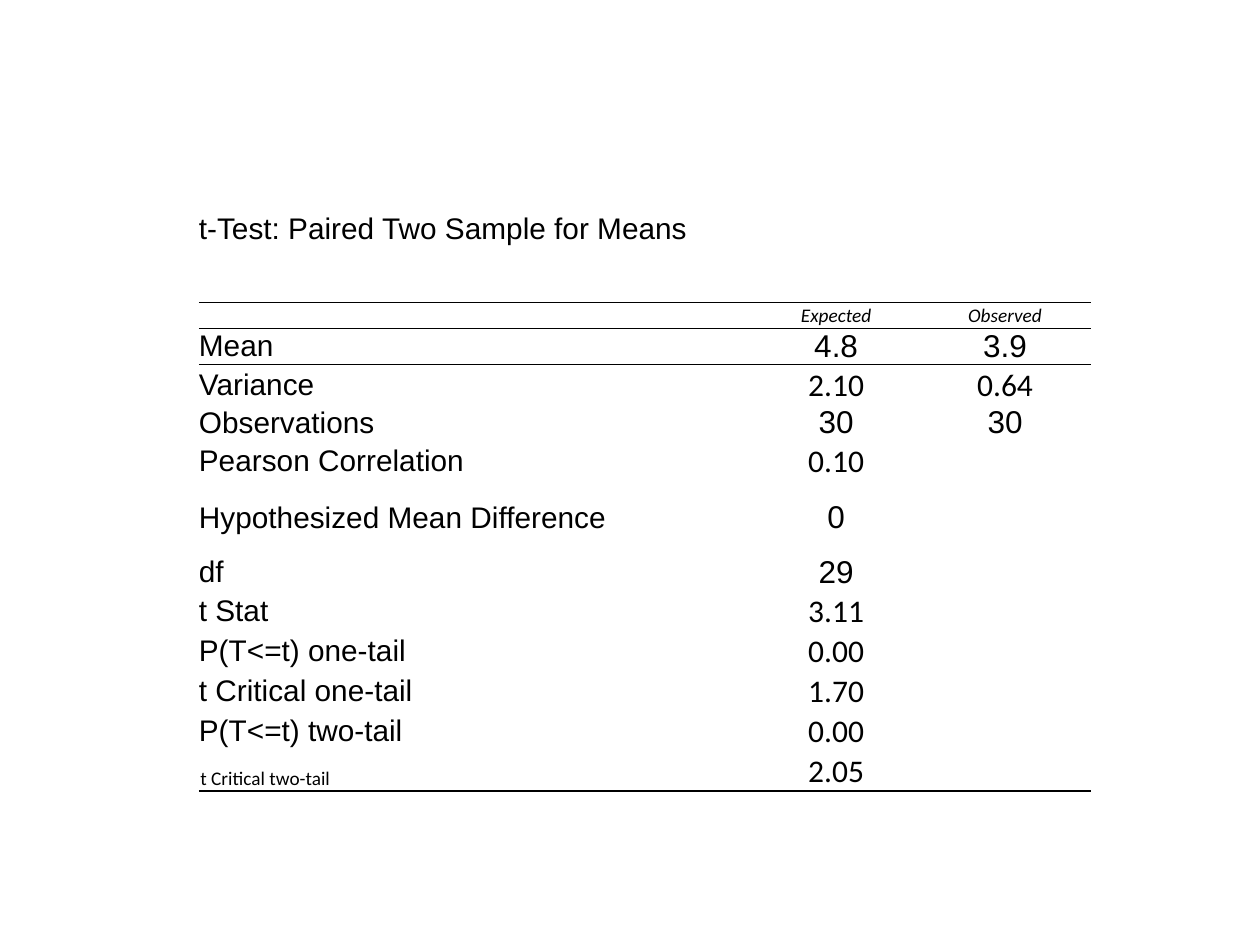
from lxml.etree import SubElement
from pptx import Presentation
from pptx.dml.color import RGBColor
from pptx.enum.text import MSO_ANCHOR, PP_ALIGN
from pptx.oxml import parse_xml
from pptx.oxml.ns import nsdecls, qn
from pptx.util import Cm, Pt

INK = "000000"
PLAIN = "{2D5ABB26-0587-4C30-8999-92F81FD0307C}"  # no style, no grid
ROWS = [
    ("t-Test: Paired Two Sample for Means", "", ""),
    ("", "", ""),
    ("", "Expected", "Observed"),
    ("Mean", "4.8", "3.9"),
    ("Variance", "2.10", "0.64"),
    ("Observations", "30", "30"),
    ("Pearson Correlation", "0.10", ""),
    ("Hypothesized Mean Difference", "0", ""),
    ("df", "29", ""),
    ("t Stat", "3.11", ""),
    ("P(T<=t) one-tail", "0.00", ""),
    ("t Critical one-tail", "1.70", ""),
    ("P(T<=t) two-tail", "0.00", ""),
    ("t Critical two-tail", "2.05", ""),
]
HEAD, LAST = 2, len(ROWS) - 1
WIDTHS = (11.18, 3.33, 3.48)
HEIGHTS = {0: 1.47, HEAD: 0.51, 7: 1.47, LAST: 0.53}
STEP = 0.74
RULES = {HEAD: 1, HEAD + 1: 0.5, LAST + 1: 1}  # row below the line: points


def color(code):
    return RGBColor.from_string(code)


def rule(cell, side, width):
    """Draw one edge of a cell; side is lnT or lnB."""
    line = parse_xml(
        f'<a:{side} {nsdecls("a")} w="{Pt(width)}"><a:solidFill>'
        f'<a:srgbClr val="{INK}"/></a:solidFill></a:{side}>')
    cell._tc.get_or_add_tcPr().insert(0, line)


def style(row, col, text):
    """Give font name, size and whether the cell sits on its base."""
    if row == HEAD or (row == LAST and col == 0) or not text:
        return "Calibri", 11, True
    if col == 0:
        return "Arial", 17, False
    exact = len(text) == 4  # values with two decimals
    return ("Calibri" if exact else "Arial"), 18, exact


def fill(cell, row, col, text):
    name, size, base = style(row, col, text)
    cell.fill.background()
    pad = Cm(0.03) if base else 0
    cell.margin_left = cell.margin_right = cell.margin_top = pad
    cell.margin_bottom = 0
    cell.vertical_anchor = MSO_ANCHOR.BOTTOM if base else MSO_ANCHOR.MIDDLE
    para = cell.text_frame.paragraphs[0]
    if text:
        para.text = text
        para.alignment = PP_ALIGN.CENTER if col else PP_ALIGN.LEFT
        font = para.font
        font.name, font.size = name, Pt(size)
        font.italic = row == HEAD
        font.color.rgb = color(INK)
    else:  # keep blank cells from stretching their row
        SubElement(para._p, qn("a:endParaRPr"), sz=str(size * 100))
    # Bottom goes in first, so that top comes before it
    for side, edge in (("lnB", row + 1), ("lnT", row)):
        if edge in RULES:
            rule(cell, side, RULES[edge])


def results(slide, left, top):
    """Place the test table with its corner at left, top (cm)."""
    highs = [HEIGHTS.get(i, STEP) for i in range(len(ROWS))]
    frame = slide.shapes.add_table(
        len(ROWS), len(WIDTHS), Cm(left), Cm(top),
        Cm(sum(WIDTHS)), Cm(sum(highs)))
    table = frame.table
    table.first_row = table.horz_banding = False
    table._tbl.tblPr.find(qn("a:tableStyleId")).text = PLAIN
    for col, width in zip(table.columns, WIDTHS):
        col.width = Cm(width)
    for row, high in zip(table.rows, highs):
        row.height = Cm(high)
    for i, row in enumerate(ROWS):
        for j, text in enumerate(row):
            fill(table.cell(i, j), i, j, text)
    # Heading spans the first two columns
    table.cell(0, 0).merge(table.cell(0, 1))


def main():
    deck = Presentation()
    deck.slide_width, deck.slide_height = Cm(25.4), Cm(19.05)
    slide = deck.slides.add_slide(deck.slide_layouts[6])
    results(slide, 4.01, 3.89)
    deck.save("out.pptx")


if __name__ == "__main__":
    main()
